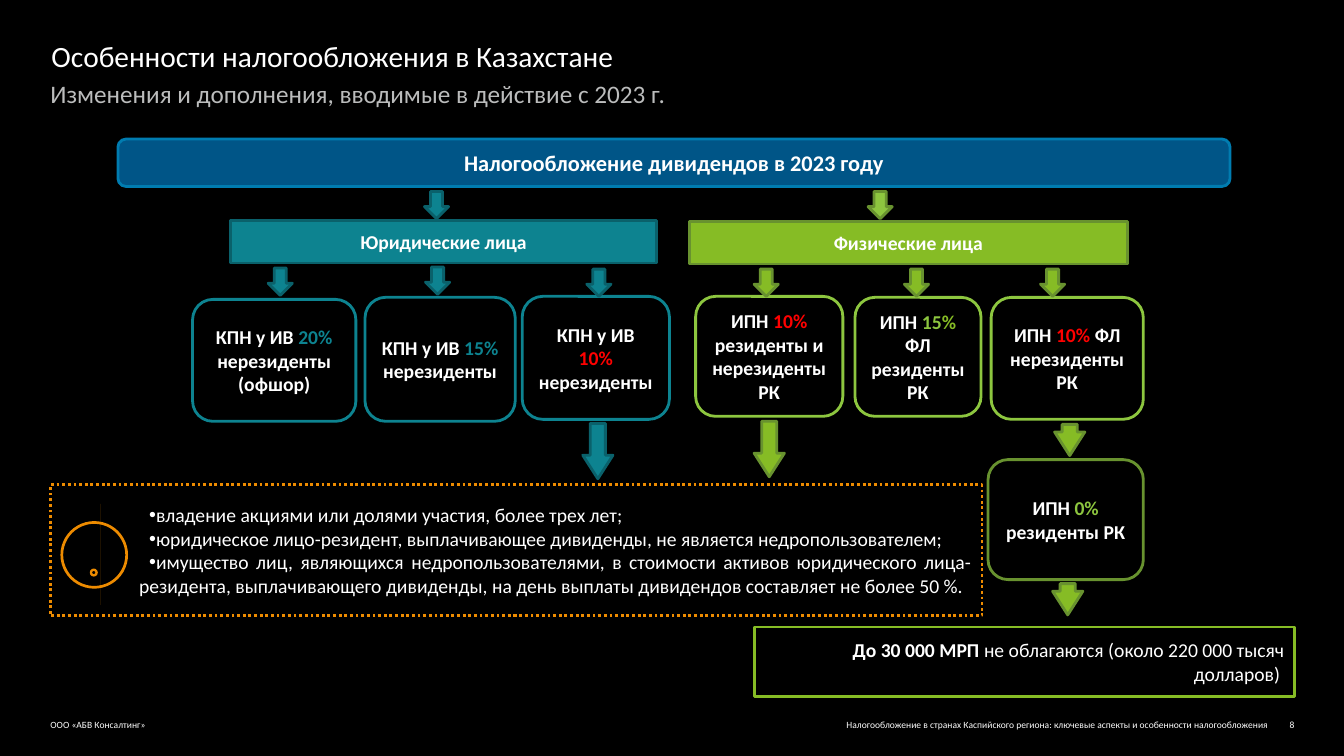
from dataclasses import dataclass

from lxml.etree import SubElement
from pptx import Presentation
from pptx.dml.color import RGBColor
from pptx.enum.dml import MSO_LINE
from pptx.enum.shapes import MSO_SHAPE
from pptx.enum.text import MSO_ANCHOR, MSO_AUTO_SIZE, PP_ALIGN
from pptx.oxml.ns import qn
from pptx.util import Inches, Pt


@dataclass(frozen=True)
class Theme:
    font: str = "Calibri"
    background: str = "000000"
    text: str = "FFFFFF"
    muted: str = "BBBCBC"
    blue: str = "005587"
    blue_edge: str = "007CB0"
    teal: str = "0D8390"
    teal_edge: str = "0A616B"
    green: str = "86BC25"
    light_green: str = "8DC63F"
    green_edge: str = "68922F"
    orange: str = "ED8B00"
    red: str = "FF0000"
    title_size: float = 21
    subtitle_size: float = 18
    banner_size: float = 16
    body_size: float = 14
    footer_size: float = 6.8
    line_width: float = 2


class TaxSlide:
    def __init__(self, presentation, theme):
        self.theme = theme
        self.slide = presentation.slides.add_slide(presentation.slide_layouts[1])
        fill = self.slide.background.fill
        fill.solid()
        fill.fore_color.rgb = RGBColor.from_string(theme.background)

    def style_font(self, paragraph, size, color=None, bold=False):
        font = paragraph.font
        font.name, font.size, font.bold = self.theme.font, Pt(size), bold
        font.color.rgb = RGBColor.from_string(color or self.theme.text)

    def paint(self, shape, fill=None, edge=None):
        if fill:
            shape.fill.solid()
            shape.fill.fore_color.rgb = RGBColor.from_string(fill)
        else:
            shape.fill.background()
        if edge:
            shape.line.color.rgb = RGBColor.from_string(edge)
            shape.line.width = Pt(self.theme.line_width)
        else:
            shape.line.fill.background()

    def place(self, shape, box):
        shape.left, shape.top, shape.width, shape.height = map(Inches, box)

    def write_flush(self, shape, text, size, color=None, align=PP_ALIGN.LEFT):
        """Set one line of text with no inner margins, from the top edge."""
        frame = shape.text_frame
        frame.word_wrap = True
        frame.auto_size = MSO_AUTO_SIZE.NONE
        frame.vertical_anchor = MSO_ANCHOR.TOP
        frame.margin_left = frame.margin_right = frame.margin_top = frame.margin_bottom = 0
        paragraph = frame.paragraphs[0]
        paragraph.text, paragraph.alignment = text, align
        self.style_font(paragraph, size, color)

    def title(self, box, text):
        title = self.slide.shapes.title
        self.place(title, box)
        self.write_flush(title, text, self.theme.title_size)

    def label(self, box, text, size, color=None, align=PP_ALIGN.LEFT):
        label = self.slide.shapes.add_textbox(*map(Inches, box))
        self.write_flush(label, text, size, color, align)

    def conditions(self, box, items):
        """Put the bulleted conditions into the body placeholder with a dotted frame."""
        body = self.slide.placeholders[1]
        self.place(body, box)
        self.paint(body, edge=self.theme.orange)
        body.line.dash_style = MSO_LINE.ROUND_DOT
        frame = body.text_frame
        frame.auto_size = MSO_AUTO_SIZE.NONE
        frame.vertical_anchor = MSO_ANCHOR.MIDDLE
        for index, item in enumerate(items):
            paragraph = frame.add_paragraph() if index else frame.paragraphs[0]
            paragraph.text, paragraph.alignment = item, PP_ALIGN.JUSTIFY
            paragraph.space_before = Pt(0)
            properties = paragraph._p.get_or_add_pPr()
            properties.set("marL", str(Inches(0.78)))
            properties.set("indent", str(Inches(0.1)))
            SubElement(properties, qn("a:buChar")).set("char", "•")
            self.style_font(paragraph, self.theme.body_size)

    def shape(self, kind, box, fill=None, edge=None):
        shape = self.slide.shapes.add_shape(kind, *map(Inches, box))
        shape.shadow.inherit = False
        self.paint(shape, fill, edge)
        return shape

    def panel(self, kind, box, runs, fill=None, edge=None, size=None,
              align=PP_ALIGN.CENTER, bold=True):
        """Draw a box; runs are (text, colour) or (text, colour, bold)."""
        frame = self.shape(kind, box, fill, edge).text_frame
        frame.word_wrap = True
        frame.vertical_anchor = MSO_ANCHOR.MIDDLE
        paragraph = frame.paragraphs[0]
        paragraph.alignment = align
        self.style_font(paragraph, size or self.theme.body_size, bold=bold)
        for text, color, *weight in runs:
            run = paragraph.add_run()
            run.text = text
            if color:
                run.font.color.rgb = RGBColor.from_string(color)
            if weight:
                run.font.bold = weight[0]

    def arrow(self, box, fill, edge, head=0.5):
        arrow = self.shape(MSO_SHAPE.DOWN_ARROW, box, fill, edge)
        arrow.adjustments[1] = head

    def warning_icon(self):
        orange = self.theme.orange
        for box, thickness in (((0.6, 5.17, 0.67, 0.67), 0.04), ((0.89, 5.64, 0.08, 0.08), 0.3)):
            self.shape(MSO_SHAPE.DONUT, box, orange).adjustments[0] = thickness
        outer = [(0.89, 5.3), (0.98, 5.3), (0.99, 5.32), (0.98, 5.59),
                 (0.96, 5.61), (0.91, 5.61), (0.89, 5.59), (0.88, 5.32)]
        inner = [(0.91, 5.33), (0.92, 5.58), (0.95, 5.58), (0.96, 5.33)]
        builder = self.slide.shapes.build_freeform(*outer[0], scale=Inches(1))
        builder.add_line_segments(outer[1:], close=True)
        builder.move_to(*inner[0])
        builder.add_line_segments(inner[1:], close=True)
        stroke = builder.convert_to_shape()
        stroke.shadow.inherit = False
        self.paint(stroke, orange)


def main():
    presentation = Presentation()
    presentation.slide_width, presentation.slide_height = Inches(13.33), Inches(7.5)
    theme = Theme()
    page = TaxSlide(presentation, theme)
    rounded, rectangle = MSO_SHAPE.ROUNDED_RECTANGLE, MSO_SHAPE.RECTANGLE
    teal = (theme.teal, theme.teal_edge)
    green = (theme.green, theme.green_edge)

    page.title((0.51, 0.38, 12.33, 0.37), "Особенности налогообложения в Казахстане")
    page.label((0.5, 0.78, 12.34, 0.42), "Изменения и дополнения, вводимые в действие с 2023 г.",
               theme.subtitle_size, theme.muted)

    page.panel(rounded, (1.17, 1.38, 11.03, 0.47),
               [("Налогообложение дивидендов в 2023 году", None)],
               theme.blue, theme.blue_edge, theme.banner_size)
    page.panel(rectangle, (2.29, 2.19, 4.22, 0.42), [("Юридические лица", None)], *teal)
    page.panel(rectangle, (6.84, 2.2, 4.34, 0.42), [("Физические лица", None)], *green)

    rates = [
        ((1.91, 2.97, 1.62, 1.21), theme.teal,
         [("КПН у ИВ ", None), ("20% ", theme.teal), ("нерезиденты (офшор)", None)]),
        ((3.62, 2.95, 1.49, 1.23), theme.teal,
         [("КПН у ИВ ", None), ("15% ", theme.teal), ("нерезиденты", None)]),
        ((5.18, 2.94, 1.46, 1.22), theme.teal,
         [("КПН у ИВ ", None), ("10% ", theme.red), ("нерезиденты", None)]),
        ((6.9, 2.94, 1.46, 1.19), theme.light_green,
         [("ИПН ", None), ("10%", theme.red), (" резиденты и нерезиденты РК", None)]),
        ((8.48, 2.95, 1.25, 1.18), theme.light_green,
         [("ИПН ", None), ("15", theme.light_green), ("%", theme.green),
          (" ФЛ резиденты РК", None)]),
        ((9.83, 2.95, 1.51, 1.21), theme.light_green,
         [("ИПН ", None), ("10% ", theme.red), ("ФЛ нерезиденты РК", None)]),
        ((9.8, 4.56, 1.54, 1.19), theme.green_edge,
         [("ИПН ", None), ("0% ", theme.light_green), ("резиденты РК", None)]),
    ]
    for box, edge, runs in rates:
        page.panel(rounded, box, runs, edge=edge)

    page.arrow((4.21, 1.9, 0.24, 0.27), *teal)
    page.arrow((8.61, 1.9, 0.24, 0.27), theme.light_green, theme.green_edge)
    for colors, branches in ((teal, ((2.66, 2.66), (4.22, 2.65), (5.82, 2.67))),
                             (green, ((7.48, 2.67), (8.97, 2.67), (10.32, 2.67)))):
        for left, top in branches:
            page.arrow((left, top, 0.24, 0.27), *colors)
    for left, top, height, colors in ((5.78, 4.2, 0.55, teal), (7.48, 4.18, 0.55, green),
                                      (10.46, 4.21, 0.31, green), (10.44, 5.79, 0.31, green)):
        page.arrow((left, top, 0.3, height), *colors, head=0.78)

    page.conditions((0.5, 4.81, 9.24, 1.3), [
        "владение акциями или долями участия, более трех лет;",
        "юридическое лицо-резидент, выплачивающее дивиденды, не является недропользователем;",
        "имущество лиц, являющихся недропользователями, в стоимости активов юридического "
        "лица-резидента, выплачивающего дивиденды, на день выплаты дивидендов составляет "
        "не более 50 %.",
    ])
    page.warning_icon()
    page.panel(rectangle, (7.48, 6.22, 5.36, 0.69),
               [("До 30 000 МРП ", None, True),
                ("не облагаются (около 220 000 тысяч долларов) ", None)],
               edge=theme.green, align=PP_ALIGN.RIGHT, bold=False)

    for left, width, text, align in (
        (0.5, 6.5, "ООО «АБВ Консалтинг»", PP_ALIGN.LEFT),
        (7.23, 5.35, "Налогообложение в странах Каспийского региона: ключевые аспекты "
                     "и особенности налогообложения", PP_ALIGN.RIGHT),
        (12.5, 0.34, "8", PP_ALIGN.RIGHT),
    ):
        page.label((left, 7.13, width, 0.11), text, theme.footer_size, align=align)

    presentation.save("out.pptx")


if __name__ == "__main__":
    main()
